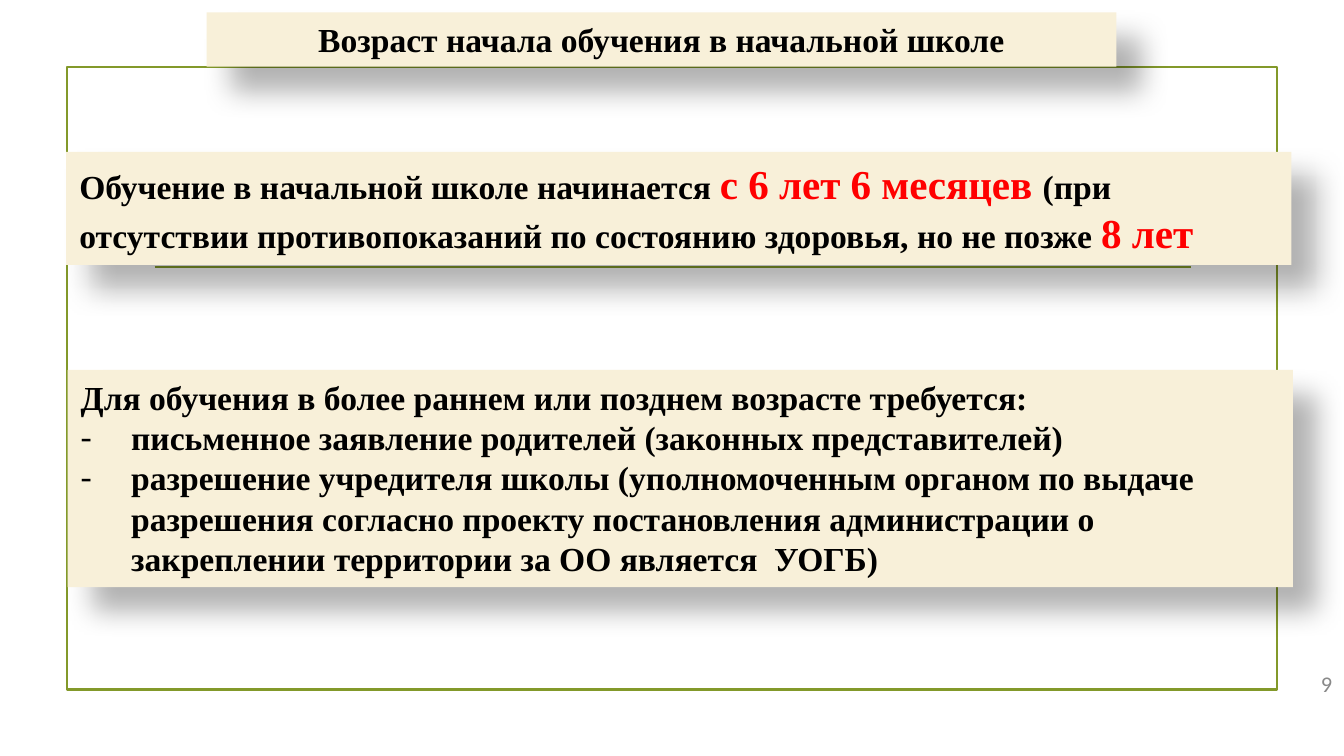
from dataclasses import dataclass

from lxml.etree import SubElement
from pptx import Presentation
from pptx.dml.color import RGBColor
from pptx.enum.shapes import MSO_CONNECTOR, MSO_SHAPE
from pptx.enum.text import MSO_ANCHOR, PP_ALIGN
from pptx.oxml.ns import qn
from pptx.util import Pt

GREEN, CREAM, BLACK, RED, GREY = "83992A", "F8F0D9", "000000", "FF0000", "898989"
SERIF = "Times New Roman"


@dataclass
class Span:
    text: str
    size: float = 18
    color: str = BLACK


@dataclass
class Line:
    spans: list[Span]
    dash: bool = False
    align: PP_ALIGN = PP_ALIGN.LEFT


@dataclass
class Panel:
    left: float
    top: float
    width: float
    height: float
    lines: list[Line]


def paint(target, color: str) -> None:
    target.rgb = RGBColor.from_string(color)


def stroke(line) -> None:
    line.width = Pt(1.25)
    paint(line.fill_color if hasattr(line, "fill_color") else line.color, GREEN)


def cast(shape) -> None:
    props = shape.fill._xPr
    effects = props.find(qn("a:effectLst"))
    shade = SubElement(effects, qn("a:outerShdw"), blurRad=str(Pt(15)),
                       dist=str(Pt(18)), dir="2700000", algn="tl", rotWithShape="0")
    tone = SubElement(shade, qn("a:srgbClr"), val=BLACK)
    SubElement(tone, qn("a:alpha"), val="30000")


def write(para, line: Line) -> None:
    para.alignment = line.align
    if line.dash:
        props = para._p.get_or_add_pPr()
        props.set("marL", str(Pt(27)))
        props.set("indent", str(-Pt(27)))
        SubElement(props, qn("a:buFont"), typeface=SERIF)
        SubElement(props, qn("a:buChar"), char="-")
    for span in line.spans:
        run = para.add_run()
        run.text = span.text
        run.font.name = SERIF
        run.font.size = Pt(span.size)
        run.font.bold = True
        paint(run.font.color, span.color)


def draw(slide, panel: Panel) -> None:
    shape = slide.shapes.add_shape(MSO_SHAPE.RECTANGLE, Pt(panel.left), Pt(panel.top),
                                   Pt(panel.width), Pt(panel.height))
    shape.shadow.inherit = False
    shape.fill.solid()
    paint(shape.fill.fore_color, CREAM)
    shape.line.fill.background()
    cast(shape)
    frame = shape.text_frame
    frame.word_wrap = True
    frame.vertical_anchor = MSO_ANCHOR.TOP
    for index, line in enumerate(panel.lines):
        write(frame.add_paragraph() if index else frame.paragraphs[0], line)


def border(slide) -> None:
    box = slide.shapes.add_shape(MSO_SHAPE.RECTANGLE, Pt(36), Pt(36), Pt(648), Pt(333.4))
    box.shadow.inherit = False
    box.fill.background()
    stroke(box.line)
    rule = slide.shapes.add_connector(MSO_CONNECTOR.STRAIGHT, Pt(82.8), Pt(143.2),
                                      Pt(638), Pt(143.2))
    stroke(rule.line)
    SubElement(rule._element.spPr, qn("a:effectLst"))


def number(slide, text: str) -> None:
    box = slide.shapes.add_textbox(Pt(553), Pt(355.7), Pt(167.8), Pt(21.6))
    frame = box.text_frame
    frame.word_wrap = True
    frame.vertical_anchor = MSO_ANCHOR.MIDDLE
    frame.text = text
    para = frame.paragraphs[0]
    para.alignment = PP_ALIGN.RIGHT
    font = para.runs[0].font
    font.name = "Calibri"
    font.size = Pt(12)
    paint(font.color, GREY)


PANELS = [
    Panel(35.4, 81.4, 656.5, 60.5, [Line([
        Span("Обучение в начальной школе начинается "),
        Span("с 6 лет 6 месяцев ", 22, RED),
        Span("(при отсутствии противопоказаний по состоянию здоровья, но не позже "),
        Span("8 лет", 22, RED),
    ])]),
    Panel(36.2, 198.2, 656.5, 116.4, [
        Line([Span("Для обучения в более раннем или позднем возрасте требуется:")]),
        Line([Span("письменное заявление родителей (законных представителей)")], True),
        Line([Span("разрешение учредителя школы (уполномоченным органом по выдаче "
                   "разрешения согласно проекту постановления администрации о "
                   "закреплении территории за ОО является  УОГБ)")], True),
    ]),
    Panel(110.7, 6.6, 487.4, 29.1, [
        Line([Span("Возраст начала обучения в начальной школе")], align=PP_ALIGN.CENTER),
    ]),
]


def main() -> None:
    deck = Presentation()
    deck.slide_width, deck.slide_height = Pt(720), Pt(405)
    slide = deck.slides.add_slide(deck.slide_layouts[6])
    border(slide)
    number(slide, "9")
    for panel in PANELS:
        draw(slide, panel)
    deck.save("out.pptx")


if __name__ == "__main__":
    main()
